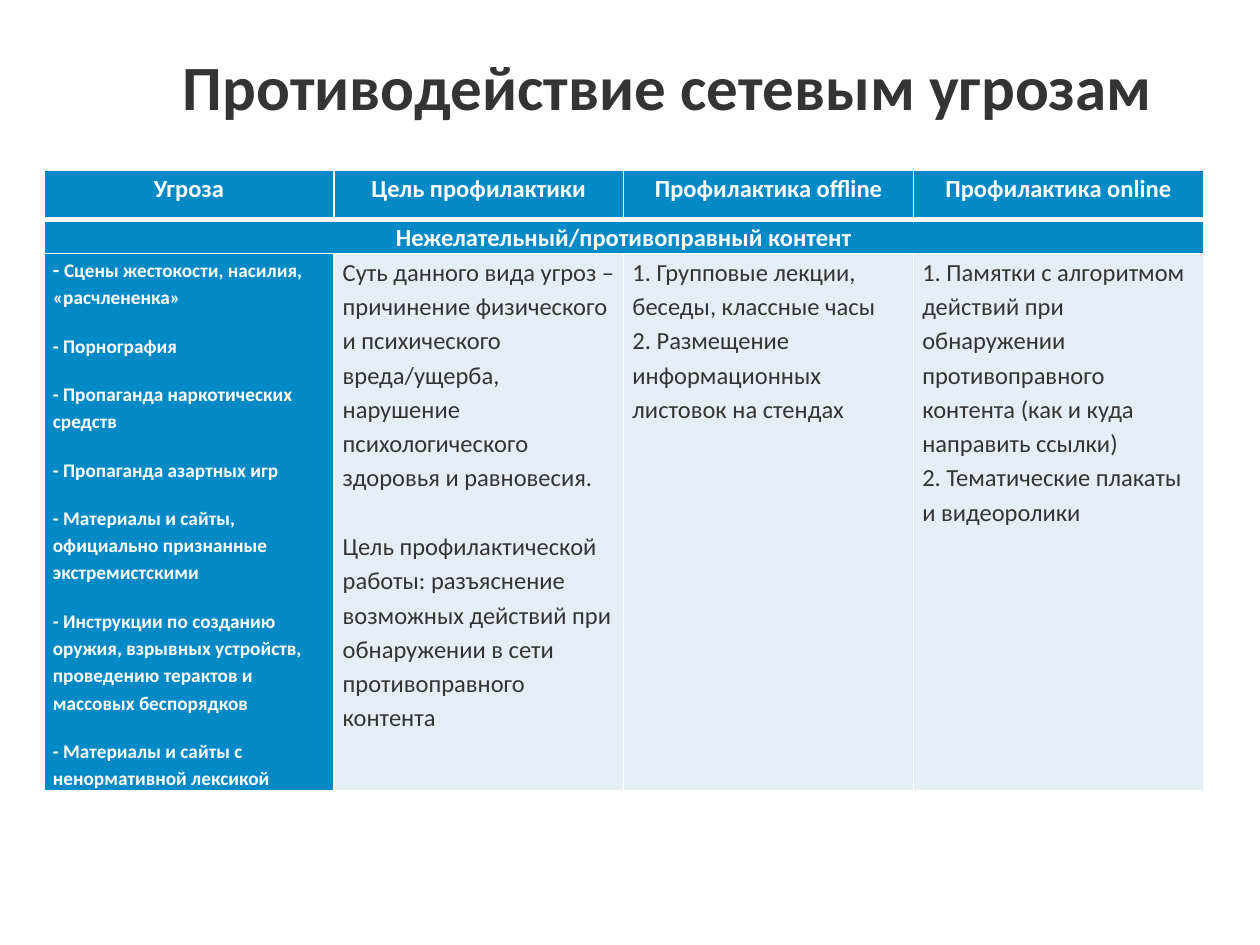
import pptx
import pptx.dml.color
import pptx.enum.text
import pptx.oxml.ns
import pptx.util
import lxml.etree

Inches = pptx.util.Inches
Pt = pptx.util.Pt
RGBColor = pptx.dml.color.RGBColor
ALIGN = pptx.enum.text.PP_ALIGN
ANCHOR = pptx.enum.text.MSO_ANCHOR
qn = pptx.oxml.ns.qn

BLUE = RGBColor(0x02, 0x89, 0xC6)
PALE = RGBColor(0xE7, 0xED, 0xF5)
DARK = RGBColor(0x34, 0x34, 0x34)
WHITE = RGBColor(0xFF, 0xFF, 0xFF)

HEADINGS = ["Угроза", "Цель профилактики", "Профилактика offline", "Профилактика online"]
SECTION = "Нежелательный/противоправный контент"
THREATS = [
    "Сцены жестокости, насилия, «расчлененка»",
    "- Порнография",
    "- Пропаганда наркотических средств",
    "- Пропаганда азартных игр",
    "- Материалы и сайты, официально признанные экстремистскими",
    "- Инструкции по созданию оружия, взрывных устройств, проведению терактов "
    "и массовых беспорядков",
    "- Материалы и сайты с ненормативной лексикой",
]
GOAL = [
    "Суть данного вида угроз – причинение физического и психического вреда/ущерба, "
    "нарушение психологического здоровья и равновесия.",
    "Цель профилактической работы: разъяснение возможных действий при обнаружении "
    "в сети противоправного контента",
]
OFFLINE = [
    "1. Групповые лекции, беседы, классные часы",
    "2. Размещение информационных листовок на стендах",
]
ONLINE = [
    "1. Памятки с алгоритмом действий при обнаружении противоправного контента "
    "(как и куда направить ссылки)",
    "2. Тематические плакаты и видеоролики",
]


def write(frame, text, size=14, color=WHITE, bold=True, align=ALIGN.LEFT,
          line=1.15, gap=0, font="Calibri", lead=None):
    """Write paragraphs, gap points apart; lead is an opening (text, size) run."""
    for index, content in enumerate(text):
        paragraph = frame.add_paragraph() if index else frame.paragraphs[0]
        paragraph.alignment = align
        paragraph.line_spacing = line
        paragraph.space_before = Pt(gap if index else 0)
        paragraph.space_after = Pt(0)
        pieces = [(content, size)]
        if lead and index == 0:
            pieces.insert(0, lead)
        for piece, points in pieces:
            run = paragraph.add_run()
            run.text = piece
            run.font.name = font
            run.font.size = Pt(points)
            run.font.bold = bold
            run.font.color.rgb = color


class SlideBuilder:
    def __init__(self, deck):
        self.slide = deck.slides.add_slide(deck.slide_layouts[5])

    def title(self, text, left, top, width, height):
        heading = self.slide.shapes.title
        heading.left, heading.top = Inches(left), Inches(top)
        heading.width, heading.height = Inches(width), Inches(height)
        heading.text_frame.vertical_anchor = ANCHOR.MIDDLE
        write(heading.text_frame, [text], size=36, color=DARK, align=ALIGN.CENTER, line=1.0)

    def table(self, left, top, column_width, columns, row_heights):
        grid = self.slide.shapes.add_table(
            len(row_heights), columns, Inches(left), Inches(top),
            Inches(column_width * columns), Inches(sum(row_heights))).table
        for column in grid.columns:
            column.width = Inches(column_width)
        for row, height in zip(grid.rows, row_heights):
            row.height = Inches(height)
        return grid

    def cell(self, cell, fill, top_line=1, bottom_line=1):
        cell.margin_left = cell.margin_right = Inches(0.07)
        cell.margin_top = cell.margin_bottom = 0
        properties = cell._tc.get_or_add_tcPr()
        borders = {"a:lnL": 1, "a:lnR": 1, "a:lnT": top_line, "a:lnB": bottom_line}
        for tag, points in borders.items():
            border = lxml.etree.SubElement(properties, qn(tag), w=str(Pt(points)))
            paint = lxml.etree.SubElement(border, qn("a:solidFill"))
            lxml.etree.SubElement(paint, qn("a:srgbClr"), val=str(WHITE))
        cell.fill.solid()
        cell.fill.fore_color.rgb = fill


def main():
    deck = pptx.Presentation()
    deck.slide_width, deck.slide_height = Inches(10), Inches(7.5)
    builder = SlideBuilder(deck)
    builder.title("Противодействие сетевым угрозам", 1.3, 0.29, 8, 0.78)

    threats_table = builder.table(0.35, 1.35, 2.3, len(HEADINGS), [0.39, 0.23, 3.86])

    # Column headings, over a thick rule
    for column, heading in enumerate(HEADINGS):
        heading_cell = threats_table.cell(0, column)
        builder.cell(heading_cell, BLUE, bottom_line=3)
        write(heading_cell.text_frame, [heading], align=ALIGN.CENTER)

    # Section band across all columns
    for column in range(len(HEADINGS)):
        builder.cell(threats_table.cell(1, column), BLUE, top_line=3)
    section_cell = threats_table.cell(1, 0)
    section_cell.merge(threats_table.cell(1, len(HEADINGS) - 1))
    write(section_cell.text_frame, [SECTION], align=ALIGN.CENTER)

    # Threats, goal and measures
    plain = dict(color=DARK, bold=False)
    details = [
        (THREATS, BLUE, dict(size=11, gap=12, lead=("- ", 12))),
        (GOAL, PALE, dict(plain, gap=19.6)),
        (OFFLINE, PALE, plain),
        (ONLINE, PALE, plain),
    ]
    for column, (text, fill, style) in enumerate(details):
        detail_cell = threats_table.cell(2, column)
        builder.cell(detail_cell, fill)
        write(detail_cell.text_frame, text, **style)

    deck.save("out.pptx")


if __name__ == "__main__":
    main()
